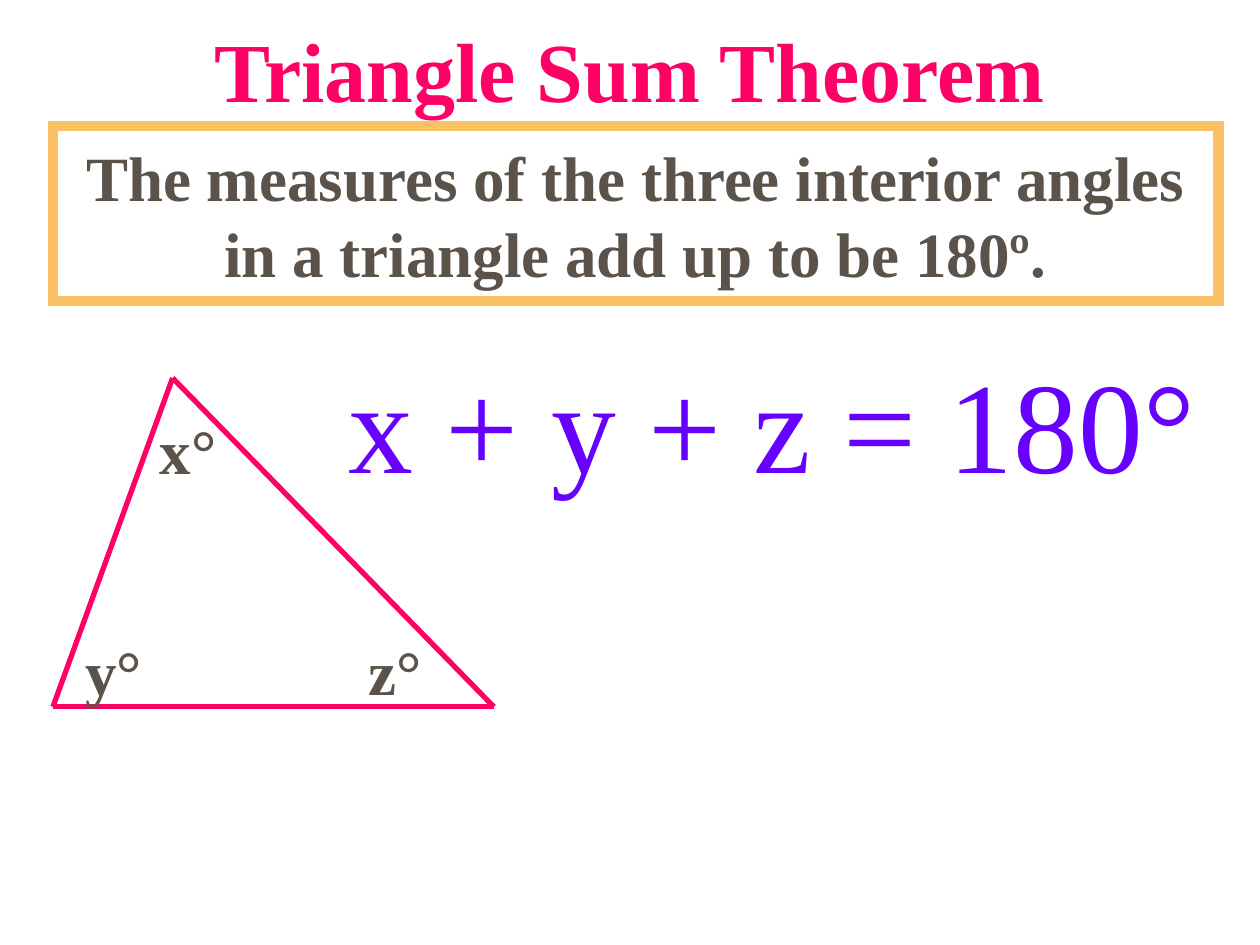
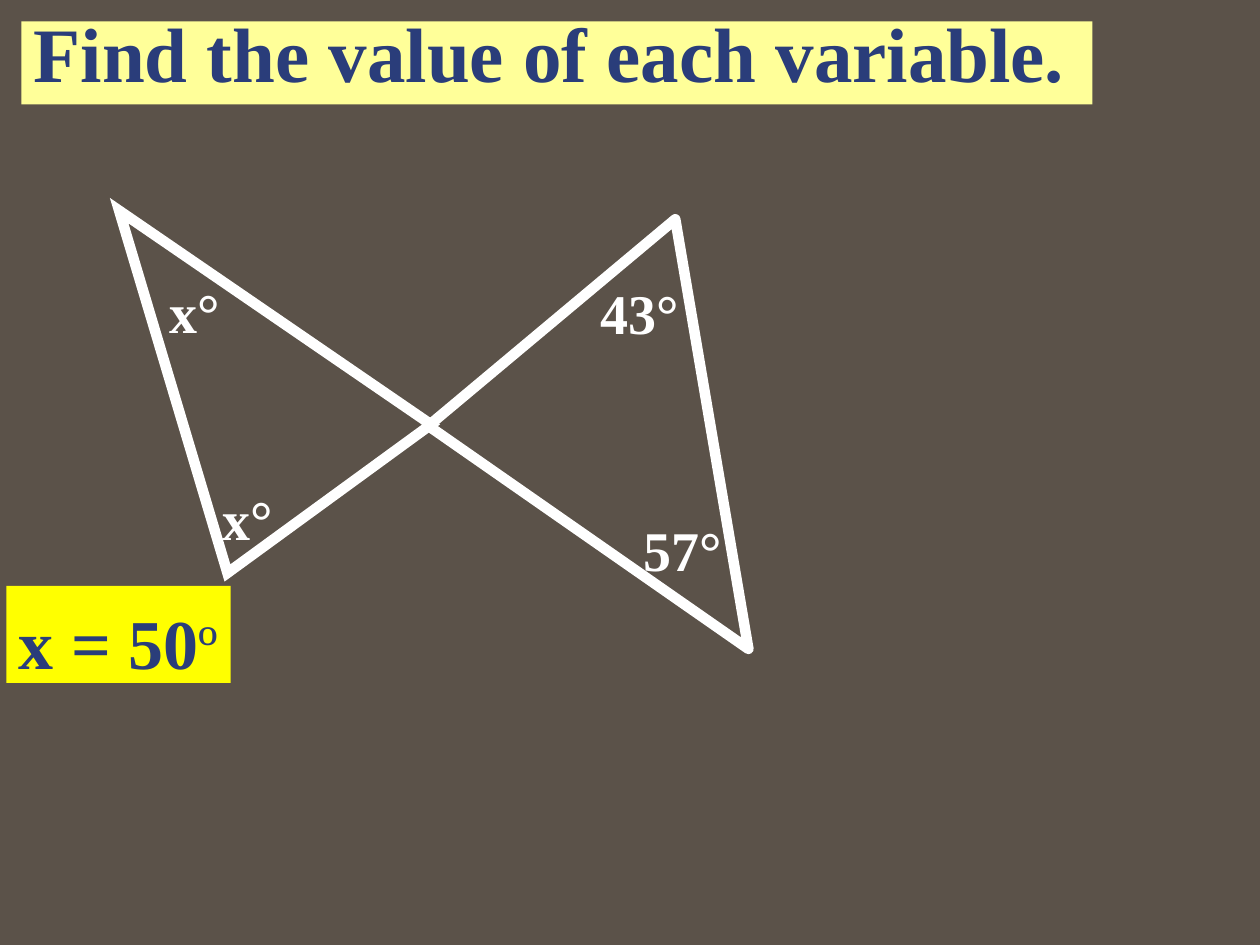
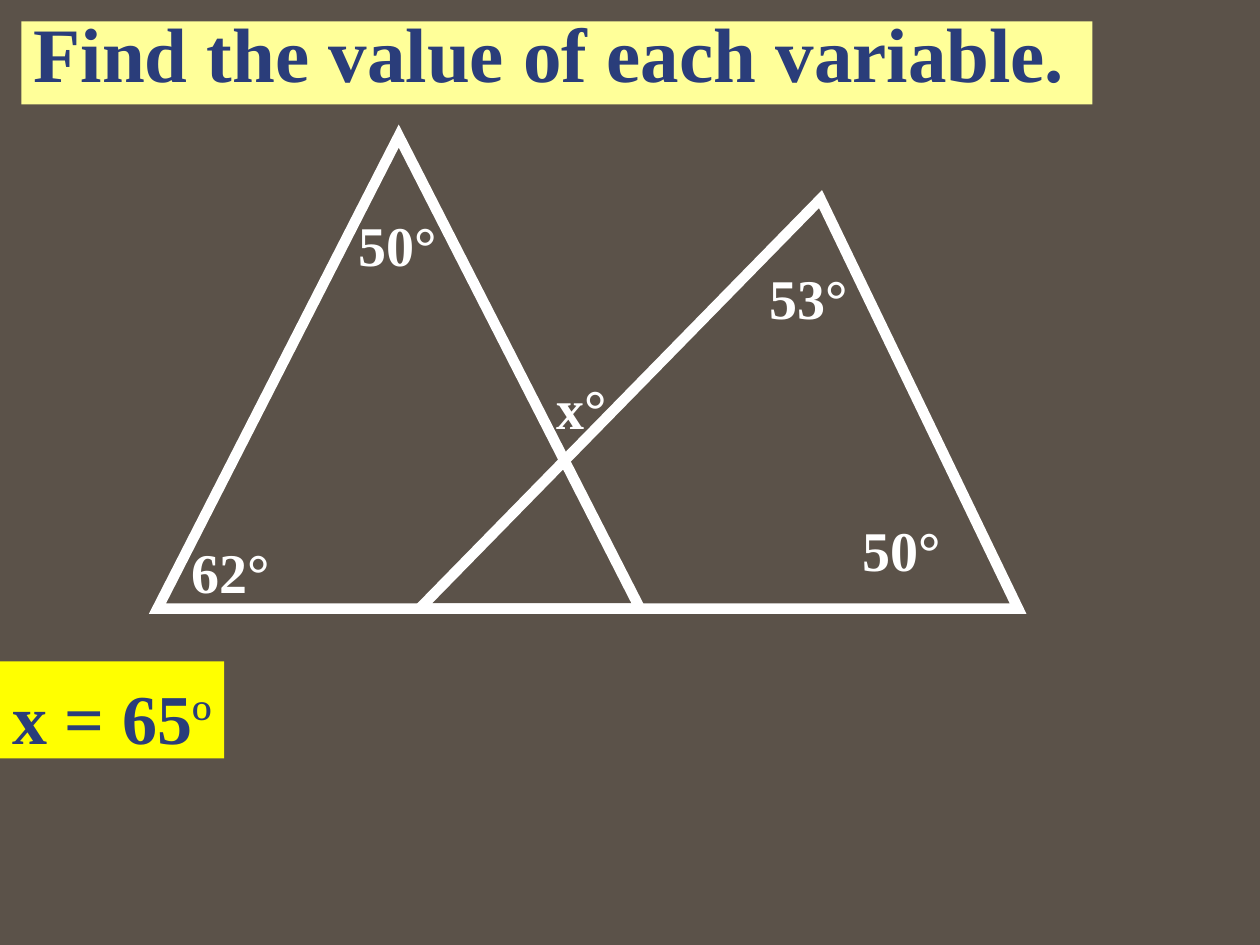
from typing import NamedTuple

from lxml import etree
from pptx import Presentation, util as u
from pptx.dml.color import RGBColor
from pptx.enum import shapes, text
from pptx.oxml import ns

PINK = RGBColor(0xFF, 0x00, 0x66)
GOLD = RGBColor(0xFA, 0xC1, 0x64)
BROWN = RGBColor(0x5B, 0x52, 0x49)
VIOLET = RGBColor(0x66, 0x00, 0xFF)
NAVY = RGBColor(0x2A, 0x3D, 0x7A)
CREAM = RGBColor(0xFF, 0xFF, 0x99)
YELLOW = RGBColor(0xFF, 0xFF, 0x00)
WHITE = RGBColor(0xFF, 0xFF, 0xFF)
FONT = "Times New Roman"


class Box(NamedTuple):
    x: float
    y: float
    w: float
    h: float

    def emu(self) -> list:
        return [u.Inches(n) for n in self]


class Label(NamedTuple):
    words: str
    x: float
    y: float
    w: float


class Tri(NamedTuple):
    box: Box
    tip: float = 0.5
    turn: float = 0
    fill: RGBColor | None = None


def outline(shape, color: RGBColor, width: float, join: str = "miter") -> None:
    shape.line.color.rgb = color
    shape.line.width = u.Pt(width)
    ln = shape.line._get_or_add_ln()
    mark = etree.SubElement(ln, ns.qn(f"a:{join}"))
    if join == "miter":
        mark.set("lim", "800000")


def paint(shape, fill: RGBColor | None) -> None:
    if fill is None:
        shape.fill.background()
    else:
        shape.fill.solid()
        shape.fill.fore_color.rgb = fill


def write(slide, words: str, box: Box, *, size: float, color: RGBColor,
          bold: bool = True, center: bool = False, wrap: bool = True,
          low: bool = False, fill: RGBColor | None = None,
          edge: RGBColor | None = None, tail: str = ""):
    """Put text in a box; tail is a lighter, smaller last run."""
    shape = slide.shapes.add_textbox(*box.emu())
    paint(shape, fill)
    if edge is not None:
        outline(shape, edge, 6)
    frame = shape.text_frame
    frame.word_wrap = wrap
    if low:
        frame.vertical_anchor = text.MSO_ANCHOR.BOTTOM
    else:
        # Body text starts a tenth of its size below the usual inset
        frame.margin_top = u.Inches(0.05 + size / 720)
    para = frame.paragraphs[0]
    para.alignment = text.PP_ALIGN.CENTER if center else text.PP_ALIGN.LEFT
    runs = [(words, size, bold)]
    if tail:
        runs.append((tail, 36, False))
    for part, points, heavy in runs:
        run = para.add_run()
        run.text = part
        run.font.name = FONT
        run.font.size = u.Pt(points)
        run.font.bold = heavy
        run.font.color.rgb = color


def mark(slide, labels: list[Label], size: float, color: RGBColor) -> None:
    for words, x, y, w in labels:
        write(slide, words, Box(x, y, w, 0.63 * size / 32),
              size=size, color=color, wrap=False)


def side(slide, start: tuple, end: tuple) -> None:
    line = slide.shapes.add_connector(
        shapes.MSO_CONNECTOR.STRAIGHT, *[u.Inches(n) for n in start + end])
    line.line.color.rgb = PINK
    line.line.width = u.Pt(3)
    etree.SubElement(line._element.spPr, ns.qn("a:effectLst"))


def draw(slide, tri: Tri) -> None:
    shape = slide.shapes.add_shape(
        shapes.MSO_SHAPE.ISOSCELES_TRIANGLE, *tri.box.emu())
    shape.shadow.inherit = False
    shape.adjustments[0] = tri.tip
    shape.rotation = tri.turn
    paint(shape, tri.fill)
    outline(shape, WHITE, 6)


def page(deck, color: RGBColor):
    slide = deck.slides.add_slide(deck.slide_layouts[6])
    slide.background.fill.solid()
    slide.background.fill.fore_color.rgb = color
    return slide


def header(slide) -> None:
    write(slide, "Find the value of each variable.", Box(0.17, 0.17, 8.5, 0.66),
          size=44, color=NAVY, low=True, fill=CREAM)


def answer(slide, words: str, x: float, y: float) -> None:
    write(slide, words, Box(x, y, 1.78, 0.77), size=40, color=NAVY,
          wrap=False, fill=YELLOW, tail="º")


def theorem(deck) -> None:
    slide = page(deck, WHITE)
    write(slide, "Triangle Sum Theorem", Box(0, 0.17, 10, 0.83),
          size=48, color=PINK, center=True, low=True)
    write(slide, "The measures of the three interior angles in a triangle "
          "add up to be 180º.", Box(0.42, 1, 9.25, 1.39),
          size=36, color=BROWN, center=True, edge=GOLD)
    # Triangle from three sides
    top, left, right = (1.37, 3), (0.42, 5.61), (3.92, 5.61)
    for start, end in ((top, left), (top, right), (right, left)):
        side(slide, start, end)
    mark(slide, [Label("x°", 1.17, 3.17, 0.65), Label("y°", 0.58, 4.92, 0.65),
                 Label("z°", 2.83, 4.92, 0.62)], 36, BROWN)
    write(slide, "x + y + z = 180°", Box(2.67, 2.58, 7.33, 1.33),
          size=74, color=VIOLET, bold=False)


def bowtie(deck) -> None:
    slide = page(deck, BROWN)
    # Right triangle, with rounded corners
    first, *rest = [(u.Inches(x), u.Inches(y))
                    for x, y in ((3.4, 3.38), (5.94, 5.15), (5.36, 1.74))]
    pen = slide.shapes.build_freeform(*first)
    pen.add_line_segments(rest, close=True)
    wing = pen.convert_to_shape()
    wing.shadow.inherit = False
    paint(wing, BROWN)
    outline(wing, WHITE, 6, "round")
    header(slide)
    answer(slide, "x = 50", 0.05, 4.65)
    draw(slide, Tri(Box(0.78, 1.4, 2, 2.83), turn=323.9, fill=BROWN))
    mark(slide, [Label("x°", 1.67, 3.75, 0.6), Label("x°", 1.25, 2.11, 0.6),
                 Label("43°", 4.67, 2.12, 0.82),
                 Label("57°", 5.01, 4, 0.82)], 32, WHITE)


def overlap(deck) -> None:
    slide = page(deck, BROWN)
    header(slide)
    answer(slide, "x = 65", 0, 5.25)
    draw(slide, Tri(Box(1.25, 1.08, 3.83, 3.75)))
    draw(slide, Tri(Box(3.33, 1.58, 4.75, 3.25), tip=0.67))
    mark(slide, [Label("62°", 1.42, 4.17, 0.82), Label("50°", 2.75, 1.58, 0.82),
                 Label("50°", 6.75, 4, 0.82), Label("53°", 6.01, 2, 0.82),
                 Label("x°", 4.32, 2.87, 0.6)], 32, WHITE)


def main() -> None:
    deck = Presentation()
    deck.slide_width, deck.slide_height = u.Inches(10), u.Inches(7.5)
    for build in (theorem, bowtie, overlap):
        build(deck)
    deck.save("out.pptx")


if __name__ == "__main__":
    main()
